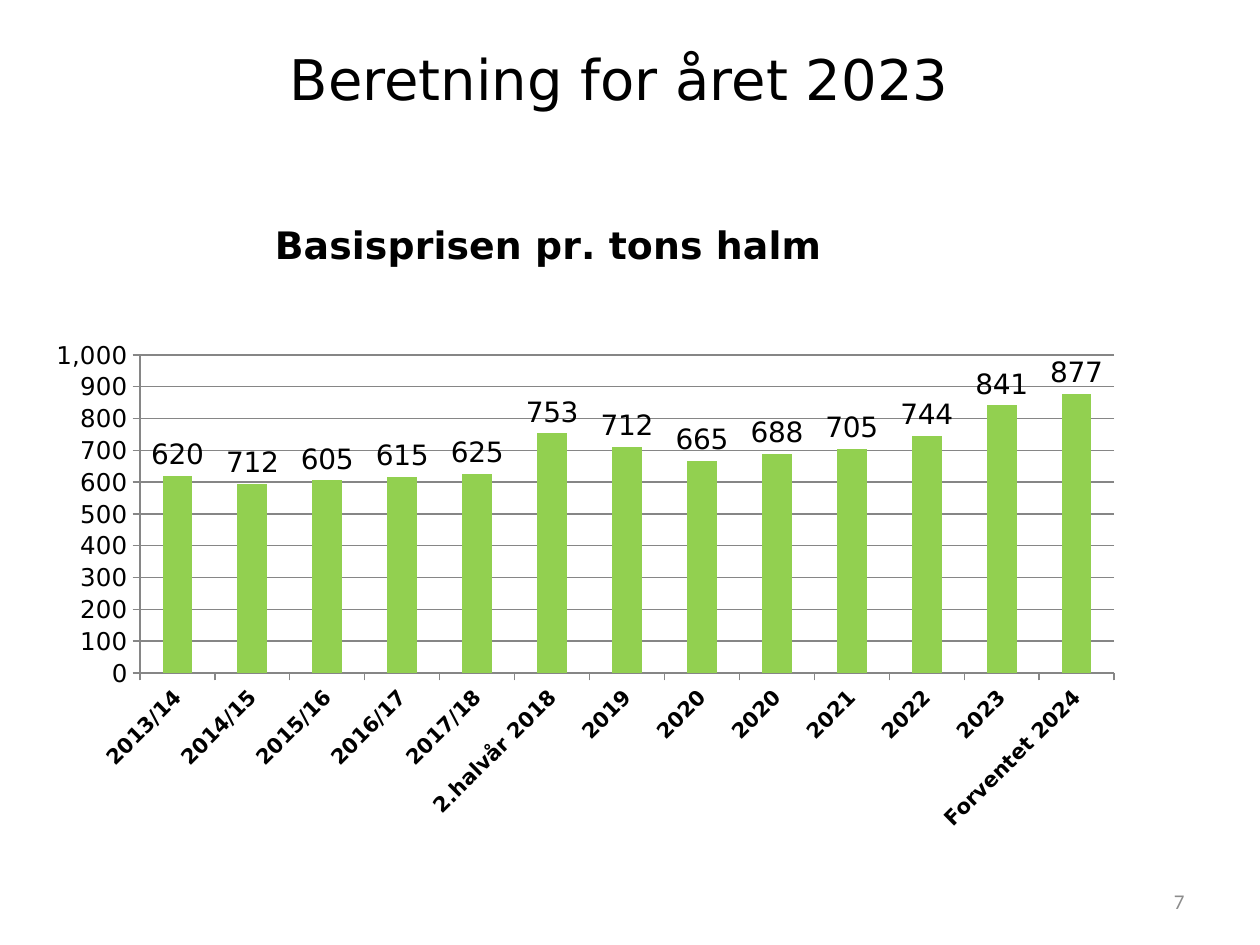
from dataclasses import dataclass

from lxml.etree import SubElement
from pptx import Presentation
from pptx.chart.chart import Chart
from pptx.chart.data import CategoryChartData
from pptx.dml.color import RGBColor
from pptx.enum.chart import XL_CHART_TYPE, XL_LABEL_POSITION, XL_TICK_MARK
from pptx.enum.text import MSO_ANCHOR, PP_ALIGN
from pptx.oxml import parse_xml
from pptx.oxml.ns import nsdecls, qn
from pptx.util import Pt

EMU_PER_PX = 914400 / 126


def px(length: int) -> int:
    return round(length * EMU_PER_PX)


@dataclass(frozen=True)
class Theme:
    ink: RGBColor = RGBColor(0x00, 0x00, 0x00)
    muted: RGBColor = RGBColor(0x8C, 0x8C, 0x8C)
    grid: RGBColor = RGBColor(0x86, 0x86, 0x86)
    bar: RGBColor = RGBColor(0x92, 0xD0, 0x50)
    main_font: str = "DejaVu Sans"
    number_font: str = "Calibri"
    heading_size: float = 32
    chart_title_size: float = 21.6
    label_size: float = 16
    value_size: float = 14
    small_size: float = 12


THEME = Theme()


@dataclass(frozen=True)
class Box:
    left: int
    top: int
    width: int
    height: int

    def emu(self) -> tuple[int, int, int, int]:
        return px(self.left), px(self.top), px(self.width), px(self.height)


@dataclass(frozen=True)
class TextBlock:
    wording: str
    box: Box
    size: float
    font: str
    color: RGBColor
    align: PP_ALIGN
    bottom_inset: int = 6


@dataclass(frozen=True)
class Price:
    period: str
    amount: int
    shown: str = ""


TEXT_BLOCKS = [
    TextBlock("Beretning for året 2023", Box(84, 31, 1071, 158), THEME.heading_size,
              THEME.main_font, THEME.ink, PP_ALIGN.CENTER, bottom_inset=70),
    TextBlock("7", Box(903, 876, 294, 50), THEME.small_size,
              THEME.number_font, THEME.muted, PP_ALIGN.RIGHT),
]
CHART_BOX = Box(35, 207, 1101, 639)
CHART_TITLE_BOX = Box(268, 213, 546, 44)
PLOT_BOX = Box(140, 355, 974, 318)
PRICES = [
    Price("2013/14", 620),
    Price("2014/15", 595, shown="712"),
    Price("2015/16", 605),
    Price("2016/17", 615),
    Price("2017/18", 625),
    Price("2.halvår 2018", 753),
    Price("2019", 712),
    Price("2020", 665),
    Price("2020", 688),
    Price("2021", 705),
    Price("2022", 744),
    Price("2023", 841),
    Price("Forventet 2024", 877),
]


def style_font(font, size: float, name: str = THEME.main_font,
               color: RGBColor = THEME.ink, bold: bool = False) -> None:
    font.size = Pt(size)
    font.name = name
    font.bold = bold
    font.color.rgb = color


def add_text(slide, block: TextBlock) -> None:
    frame = slide.shapes.add_textbox(*block.box.emu()).text_frame
    frame.word_wrap = True
    frame.vertical_anchor = MSO_ANCHOR.MIDDLE
    frame.margin_bottom = px(block.bottom_inset)
    frame.text = block.wording
    paragraph = frame.paragraphs[0]
    paragraph.alignment = block.align
    style_font(paragraph.runs[0].font, block.size, block.font, block.color)


def place_in_chart(part, box: Box, sized: bool = False) -> None:
    layout = part.find(qn("c:layout"))
    if layout is None:
        layout = parse_xml(f"<c:layout {nsdecls('c')}/>")
        part.insert(0, layout)
    manual = SubElement(layout, qn("c:manualLayout"))
    settings = {"layoutTarget": "inner"} if sized else {}
    settings |= {
        "xMode": "edge",
        "yMode": "edge",
        "x": f"{(box.left - CHART_BOX.left) / CHART_BOX.width:.4f}",
        "y": f"{(box.top - CHART_BOX.top) / CHART_BOX.height:.4f}",
    }
    if sized:
        settings["w"] = f"{box.width / CHART_BOX.width:.4f}"
        settings["h"] = f"{box.height / CHART_BOX.height:.4f}"
    for tag, setting in settings.items():
        SubElement(manual, qn(f"c:{tag}")).set("val", setting)


def style_line(line) -> None:
    line.color.rgb = THEME.grid
    line.width = Pt(0.75)


def style_axes(chart: Chart) -> None:
    periods, amounts = chart.category_axis, chart.value_axis
    for axis in (periods, amounts):
        axis.major_tick_mark = XL_TICK_MARK.OUTSIDE
        axis.minor_tick_mark = XL_TICK_MARK.NONE
        style_line(axis.format.line)
    style_font(periods.tick_labels.font, THEME.small_size, bold=True)
    label_body = periods._element.find(qn("c:txPr")).find(qn("a:bodyPr"))
    label_body.set("rot", "-2700000")
    style_font(amounts.tick_labels.font, THEME.value_size)
    amounts.tick_labels.number_format = "#,##0"
    amounts.tick_labels.number_format_is_linked = False
    amounts.minimum_scale, amounts.maximum_scale = 0, 1000
    amounts.major_unit = 100
    amounts.has_major_gridlines = True
    style_line(amounts.major_gridlines.format.line)


def style_bars(chart: Chart) -> None:
    plot = chart.plots[0]
    plot.gap_width = 150
    plot.vary_by_categories = False
    bars = plot.series[0]
    bars.format.fill.solid()
    bars.format.fill.fore_color.rgb = THEME.bar
    labels = bars.data_labels
    labels.show_value = True
    labels.number_format = "#,##0"
    labels.number_format_is_linked = False
    labels.position = XL_LABEL_POSITION.OUTSIDE_END
    style_font(labels.font, THEME.label_size)
    for index, price in enumerate(PRICES):
        if price.shown:
            label = bars.points[index].data_label
            label.text_frame.text = price.shown
            style_font(label.text_frame.paragraphs[0].runs[0].font, THEME.label_size)
            label.position = XL_LABEL_POSITION.OUTSIDE_END


def add_price_chart(slide) -> None:
    price_data = CategoryChartData(number_format="#,##0")
    price_data.categories = [price.period for price in PRICES]
    price_data.add_series("Series 1", [price.amount for price in PRICES])
    chart = slide.shapes.add_chart(
        XL_CHART_TYPE.COLUMN_CLUSTERED, *CHART_BOX.emu(), price_data).chart
    chart.has_legend = False
    chart.has_title = True
    heading = chart.chart_title.text_frame
    heading.text = "Basisprisen pr. tons halm"
    style_font(heading.paragraphs[0].runs[0].font, THEME.chart_title_size, bold=True)
    place_in_chart(chart.chart_title._element, CHART_TITLE_BOX)
    place_in_chart(chart._chartSpace.chart.plotArea, PLOT_BOX, sized=True)
    style_axes(chart)
    style_bars(chart)


def main() -> None:
    deck = Presentation()
    deck.slide_width, deck.slide_height = px(1260), px(945)
    slide = deck.slides.add_slide(deck.slide_layouts[6])
    add_price_chart(slide)
    for block in TEXT_BLOCKS:
        add_text(slide, block)
    deck.save("out.pptx")


if __name__ == "__main__":
    main()
